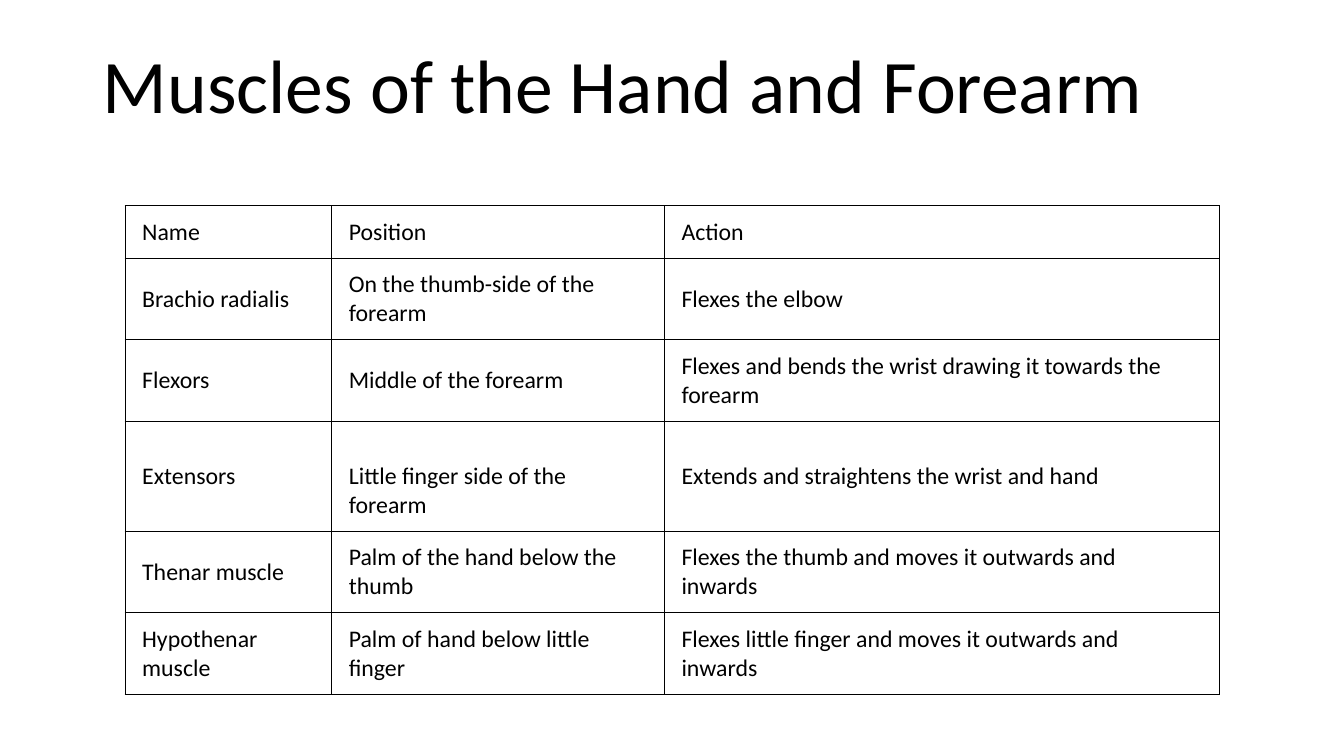
from pptx import Presentation
from pptx.dml.color import RGBColor
from pptx.enum.text import MSO_ANCHOR, MSO_AUTO_SIZE, PP_ALIGN
from pptx.oxml import parse_xml
from pptx.oxml.ns import nsdecls
from pptx.util import Inches, Pt

BLACK, WHITE = "000000", "FFFFFF"
COLS = [2.05, 3.3, 5.5]
ROWS = [0.52, 0.81, 0.81, 1.09, 0.81, 0.81]
LINE = 0.29
MUSCLES = [
    ("Name", "Position", "Action"),
    ("Brachio radialis", "On the thumb-side of the forearm", "Flexes the elbow"),
    ("Flexors", "Middle of the forearm",
     "Flexes and bends the wrist drawing it towards the forearm"),
    ("Extensors", "Little finger side of the forearm",
     "Extends and straightens the wrist and hand"),
    ("Thenar muscle", "Palm of the hand below the thumb",
     "Flexes the thumb and moves it outwards and inwards"),
    ("Hypothenar muscle", "Palm of hand below little finger",
     "Flexes little finger and moves it outwards and inwards"),
]


def style(p, size):
    for r in p.runs:
        r.font.name = "Calibri"
        r.font.size = Pt(size)
        r.font.bold = False
        r.font.color.rgb = RGBColor.from_string(BLACK)


def add_borders(cell):
    tcPr = cell._tc.get_or_add_tcPr()
    for i, side in enumerate(("lnL", "lnR", "lnT", "lnB")):
        tcPr.insert(i, parse_xml(
            f'<a:{side} {nsdecls("a")} w="{Pt(0.75)}"><a:solidFill>'
            f'<a:srgbClr val="{BLACK}"/></a:solidFill></a:{side}>'))


prs = Presentation()
prs.slide_width, prs.slide_height = Inches(13.33), Inches(7.5)
s = prs.slides.add_slide(prs.slide_layouts[5])

title = s.shapes.title
title.left, title.top = Inches(0.92), Inches(0.32)
title.width, title.height = Inches(11.5), Inches(1.02)
tf = title.text_frame
tf.text = "Muscles of the Hand and Forearm"
tf.word_wrap = True
tf.auto_size = MSO_AUTO_SIZE.NONE
tf.vertical_anchor = MSO_ANCHOR.BOTTOM
p = tf.paragraphs[0]
p.alignment = PP_ALIGN.LEFT
p.line_spacing = 0.9
style(p, 54)

table = s.shapes.add_table(len(ROWS), len(COLS), Inches(1.24), Inches(2.04),
                           Inches(sum(COLS)), Inches(sum(ROWS))).table
table.first_row = table.horz_banding = False
for column, width in zip(table.columns, COLS):
    column.width = Inches(width)

for row, height, texts in zip(table.rows, ROWS, MUSCLES):
    row.height = Inches(height)
    for cell, text in zip(row.cells, texts):
        cell.text = text
        cell.vertical_anchor = MSO_ANCHOR.MIDDLE
        cell.margin_left, cell.margin_right = Inches(0.17), Inches(0.27)
        cell.margin_top = cell.margin_bottom = Inches(0.09)
        cell.fill.solid()
        cell.fill.fore_color.rgb = RGBColor.from_string(WHITE)
        add_borders(cell)
        style(cell.text_frame.paragraphs[0], 17)

table.cell(3, 1).margin_top = Inches(0.09 + LINE)

prs.save("out.pptx")
